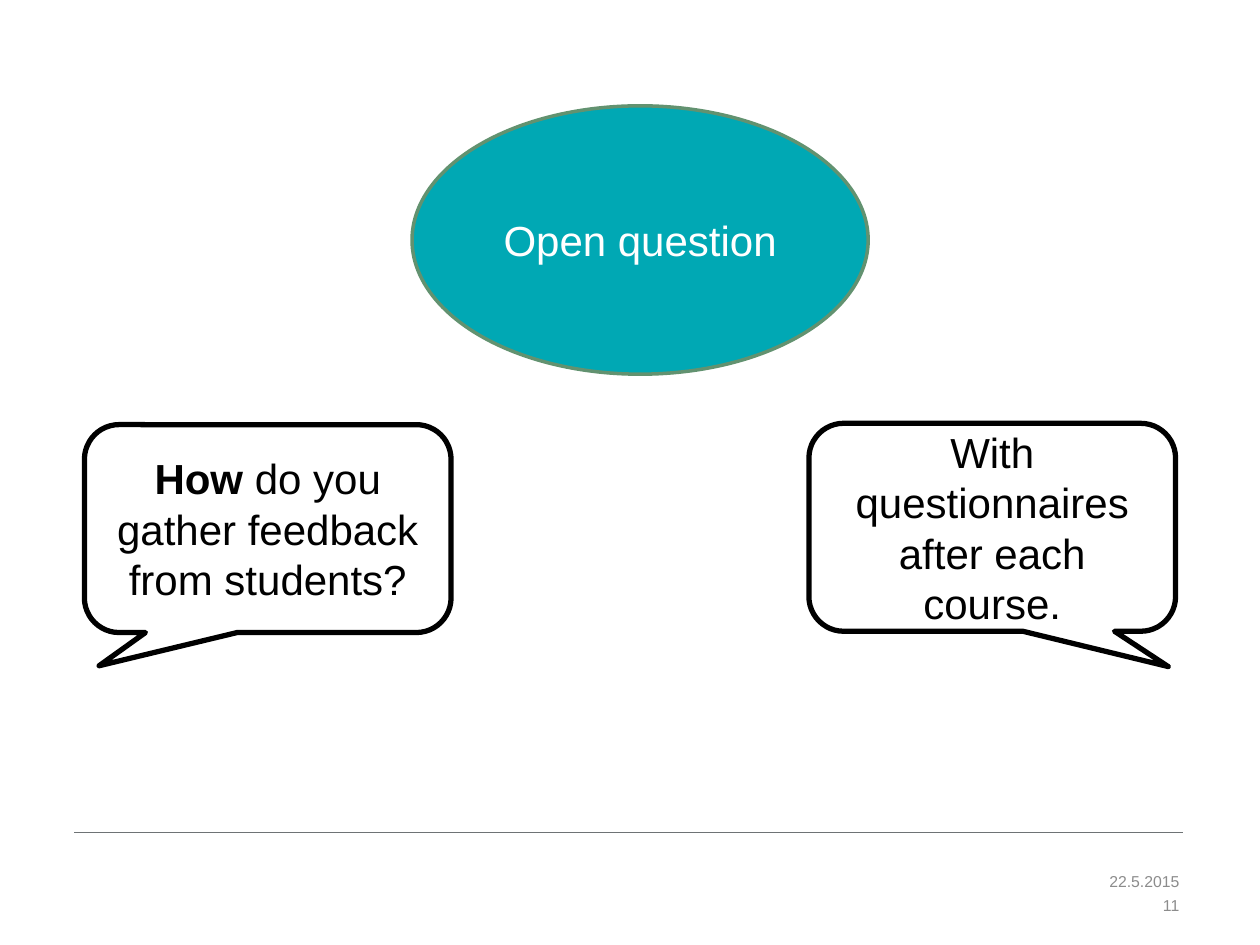
from dataclasses import dataclass

from lxml.etree import SubElement
from pptx import Presentation
from pptx.dml.color import RGBColor
from pptx.enum.shapes import MSO_CONNECTOR, MSO_SHAPE
from pptx.enum.text import MSO_ANCHOR, PP_ALIGN
from pptx.oxml.ns import qn
from pptx.util import Inches, Pt


@dataclass(frozen=True)
class Theme:
    font: str = "Arial"
    teal: str = "00A8B4"
    olive: str = "629270"
    white: str = "FFFFFF"
    black: str = "000000"
    slate: str = "6E7375"
    grey: str = "8C8C8C"
    body: int = 24
    small: int = 9


class Deck:
    """Places elements on a grid of 100 columns by 75 rows."""
    cols, rows = 100, 75

    def __init__(self, theme):
        self.theme = theme
        self.show = Presentation()
        self.show.slide_width, self.show.slide_height = Inches(10), Inches(7.5)
        self.slide = self.show.slides.add_slide(self.show.slide_layouts[6])

    def grid(self, *spots):
        units = (self.show.slide_width / self.cols,
                 self.show.slide_height / self.rows)
        return [round(spot * units[i % 2]) for i, spot in enumerate(spots)]

    def label(self, frame, text, size, color, align, lead=""):
        frame.word_wrap = True
        frame.vertical_anchor = MSO_ANCHOR.MIDDLE
        para = frame.paragraphs[0]
        para.alignment = align
        font = para.font
        font.name, font.size = self.theme.font, Pt(size)
        font.color.rgb = RGBColor.from_string(color)
        if lead:
            run = para.add_run()
            run.text, run.font.bold = lead, True
        para.add_run().text = text

    def rule(self, left, right, row, color, width):
        line = self.slide.shapes.add_connector(
            MSO_CONNECTOR.STRAIGHT, *self.grid(left, row, right, row))
        line.line.color.rgb = RGBColor.from_string(color)
        line.line.width = Pt(width)
        SubElement(line._element.spPr, qn("a:effectLst"))

    def note(self, spot, text):
        frame = self.slide.shapes.add_textbox(*self.grid(*spot)).text_frame
        frame.margin_right = 0
        self.label(frame, text, self.theme.small, self.theme.grey, PP_ALIGN.RIGHT)

    def shape(self, kind, spot, fill, edge, width, color, text, lead="", tail=()):
        item = self.slide.shapes.add_shape(kind, *self.grid(*spot))
        item.shadow.inherit = False
        item.fill.solid()
        item.fill.fore_color.rgb = RGBColor.from_string(fill)
        item.line.color.rgb = RGBColor.from_string(edge)
        item.line.width = Pt(width)
        for i, value in enumerate(tail):
            item.adjustments[i] = value
        self.label(item.text_frame, text, self.theme.body, color,
                   PP_ALIGN.CENTER, lead)

    def oval(self, spot, text):
        look = self.theme
        self.shape(MSO_SHAPE.OVAL, spot, look.teal, look.olive, 2,
                   look.white, text)

    def bubble(self, left, top, tail, text, lead=""):
        look = self.theme
        self.shape(MSO_SHAPE.ROUNDED_RECTANGULAR_CALLOUT,
                   (left, top, 29.1, 16.5), look.white, look.black, 3,
                   look.black, text, lead, tail)


def main():
    deck = Deck(Theme())

    # Footer: rule, date and page number
    deck.rule(5.9, 93.9, 66.1, deck.theme.slate, 0.75)
    deck.note((54, 68.9, 39.6, 2), "22.5.2015")
    deck.note((54, 70.9, 39.6, 1.8), "11")

    # Topic
    deck.oval((32.7, 8.4, 36.2, 21.3), "Open question")

    # Question and answer
    deck.bubble(6.7, 33.7, (-0.46, 0.66),
                "do you gather feedback from students?", lead="How ")
    deck.bubble(64.2, 33.6, (0.48, 0.67),
                "With questionnaires after each course.")

    deck.show.save("out.pptx")


if __name__ == "__main__":
    main()
